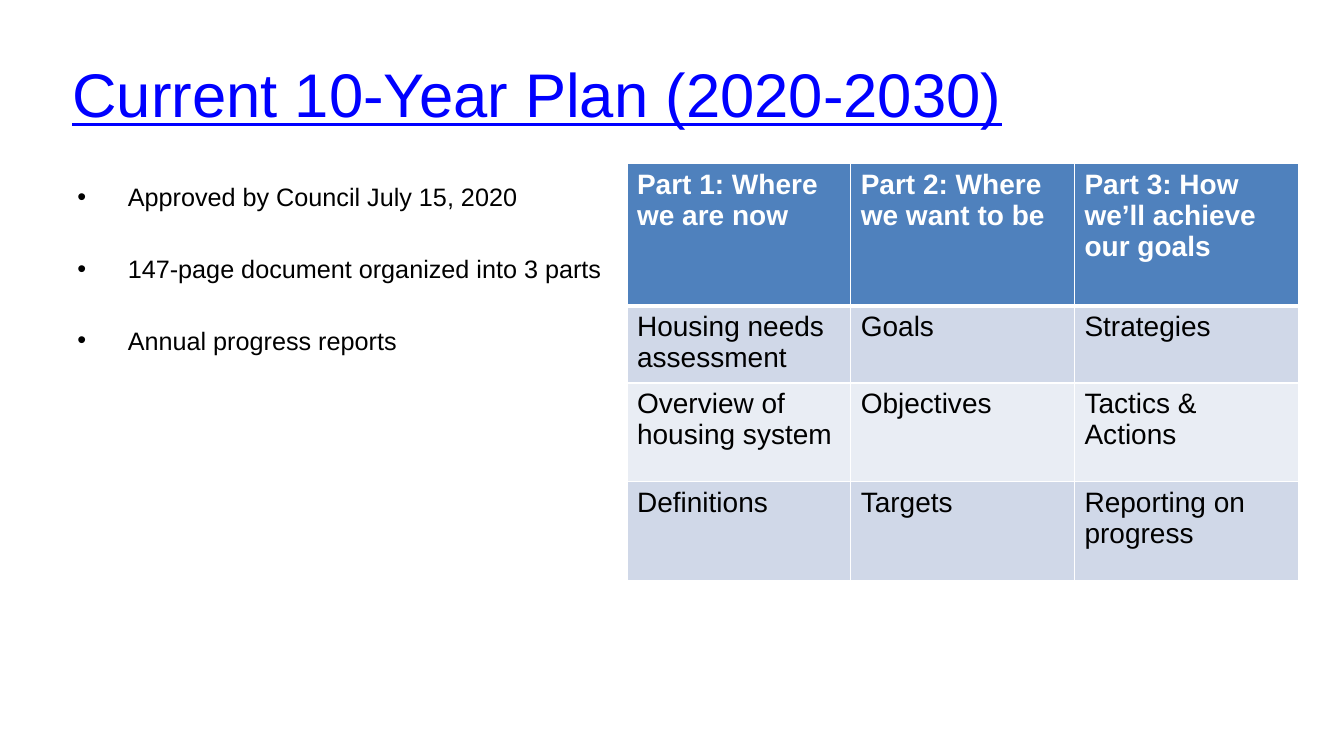
from pptx import Presentation
from pptx.dml.color import RGBColor
from pptx.enum import text
from pptx.oxml import ns
from pptx.util import Pt
from lxml import etree

WHITE = RGBColor(0xFF, 0xFF, 0xFF)
BLACK = RGBColor(0x00, 0x00, 0x00)
LINK_BLUE = RGBColor(0x00, 0x00, 0xFF)
HEADER_BLUE = RGBColor(0x4F, 0x81, 0xBD)
BANDS = (RGBColor(0xD0, 0xD8, 0xE8), RGBColor(0xE9, 0xED, 0xF4))

FACTS = (
    "Approved by Council July 15, 2020",
    "147-page document organized into 3 parts",
    "Annual progress reports",
)
PLAN_PARTS = (
    ("Part 1: Where we are now", "Part 2: Where we want to be",
     "Part 3: How we’ll achieve our goals"),
    ("Housing needs assessment", "Goals", "Strategies"),
    ("Overview of housing system", "Objectives", "Tactics & Actions"),
    ("Definitions", "Targets", "Reporting on progress"),
)
COLUMN_WIDTH = 159.84
ROW_HEIGHTS = (101.5, 39, 70.5, 70.5)


def add_run(p, words, size, color, bold=False, underline=False):
    r = p.add_run()
    r.text = words
    r.font.name = "Arial"
    r.font.size = Pt(size)
    r.font.color.rgb = color
    r.font.bold = bold
    r.font.underline = underline


def add_text_box(s, left, top, width, height, anchor):
    tf = s.shapes.add_textbox(Pt(left), Pt(top), Pt(width), Pt(height)).text_frame
    tf.word_wrap = True
    tf.vertical_anchor = anchor
    return tf


def add_title(s, words):
    tf = add_text_box(s, 44.64, 21.6, 890, 90, text.MSO_ANCHOR.MIDDLE)
    add_run(tf.paragraphs[0], words, 44, LINK_BLUE, underline=True)


def add_bullets(s, items):
    tf = add_text_box(s, 48.24, 126, 424, 303, text.MSO_ANCHOR.TOP)
    for i, item in enumerate(items):
        p = tf.add_paragraph() if i else tf.paragraphs[0]
        pPr = p._p.get_or_add_pPr()
        pPr.set("marL", str(Pt(36)))
        pPr.set("indent", str(Pt(-36)))
        if i:
            p.space_before = Pt(29.7)
        etree.SubElement(pPr, ns.qn("a:buFont"), typeface="Arial")
        etree.SubElement(pPr, ns.qn("a:buChar"), char="•")
        add_run(p, item, 18, BLACK)


def set_borders(cell, top, bottom):
    """Draw white borders; must run before the fill, which follows them in the XML."""
    tcPr = cell._tc.get_or_add_tcPr()
    for side, width in (("L", 1), ("R", 1), ("T", top), ("B", bottom)):
        ln = etree.SubElement(tcPr, ns.qn("a:ln" + side), w=str(Pt(width)))
        fill = etree.SubElement(ln, ns.qn("a:solidFill"))
        etree.SubElement(fill, ns.qn("a:srgbClr"), val=str(WHITE))


def add_plan_table(s, rows):
    n_cols = len(rows[0])
    table = s.shapes.add_table(
        len(rows), n_cols, Pt(447.84), Pt(116.9),
        Pt(n_cols * COLUMN_WIDTH), Pt(sum(ROW_HEIGHTS))).table
    for column in table.columns:
        column.width = Pt(COLUMN_WIDTH)
    for i, row in enumerate(rows):
        table.rows[i].height = Pt(ROW_HEIGHTS[i])
        header = i == 0
        for j, words in enumerate(row):
            cell = table.cell(i, j)
            set_borders(cell, top=3 if i == 1 else 1, bottom=3 if header else 1)
            cell.fill.solid()
            cell.fill.fore_color.rgb = HEADER_BLUE if header else BANDS[(i - 1) % 2]
            add_run(cell.text_frame.paragraphs[0], words, 20,
                    WHITE if header else BLACK, bold=header)


def main():
    prs = Presentation()
    prs.slide_width, prs.slide_height = Pt(960), Pt(540)
    s = prs.slides.add_slide(prs.slide_layouts[6])
    add_title(s, "Current 10-Year Plan (2020-2030)")
    add_bullets(s, FACTS)
    add_plan_table(s, PLAN_PARTS)
    prs.save("out.pptx")


if __name__ == "__main__":
    main()
